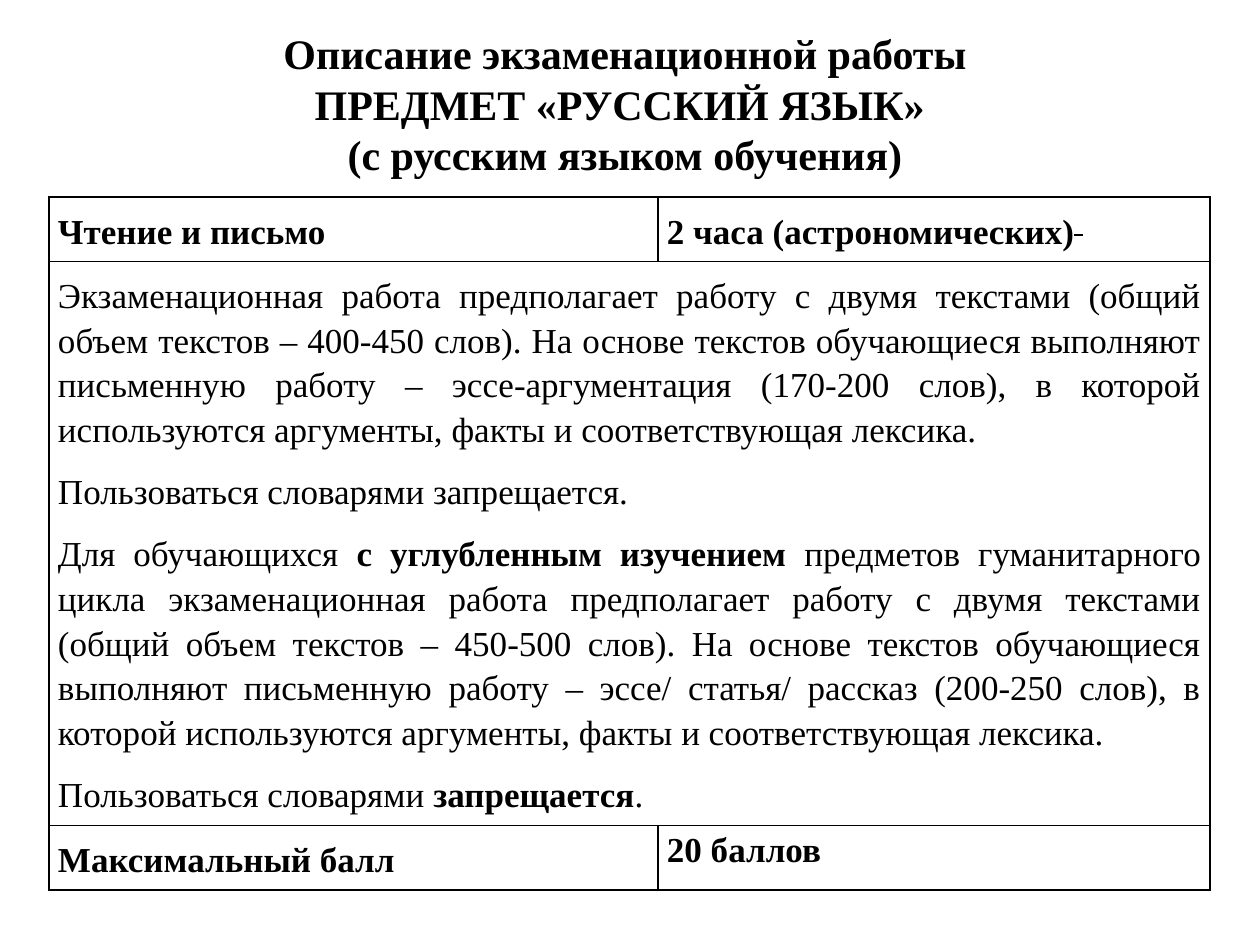
from lxml import etree
from pptx import Presentation
from pptx.dml.color import RGBColor
from pptx.enum.text import MSO_ANCHOR, PP_ALIGN
from pptx.oxml.ns import qn
from pptx.util import Pt

PX = 914400 / 126
FONT = "Times New Roman"
INK = "000000"
LEFT, CENTER, JUST = PP_ALIGN.LEFT, PP_ALIGN.CENTER, PP_ALIGN.JUSTIFY
MIDDLE = MSO_ANCHOR.MIDDLE

TITLE = [
    "Описание экзаменационной работы ",
    "ПРЕДМЕТ «РУССКИЙ ЯЗЫК» ",
    "(с русским языком обучения)",
]
BODY = [
    [("Экзаменационная работа предполагает работу с двумя текстами "
      "(общий объем текстов – 400-450 слов). На основе текстов обучающиеся "
      "выполняют письменную работу – эссе-аргументация (170-200 слов), "
      "в которой используются аргументы, факты и соответствующая лексика.", "")],
    [("Пользоваться словарями запрещается.", "")],
    [("Для обучающихся ", ""), ("с углубленным изучением", "b"),
     (" предметов гуманитарного цикла экзаменационная работа предполагает "
      "работу с двумя текстами (общий объем текстов – 450-500 слов). "
      "На основе текстов обучающиеся выполняют письменную работу – "
      "эссе/ статья/ рассказ (200-250 слов), в которой используются "
      "аргументы, факты и соответствующая лексика.", "")],
    [("Пользоваться словарями ", ""), ("запрещается", "b"), (".", "")],
]


def px(n):
    """Turn pixels into EMU."""
    return round(n * PX)


def color(code):
    """Turn a hex string into a colour."""
    return RGBColor.from_string(code)


def add_run(para, text, size, style=""):
    """Add a run; style may hold b for bold and s for strike."""
    run = para.add_run()
    run.text = text
    run.font.name = FONT
    run.font.size = Pt(size)
    run.font.bold = "b" in style
    run.font.color.rgb = color(INK)
    if "s" in style:
        run.font._element.set("strike", "sngStrike")


def fill_text(frame, paras, size, align):
    """Write paragraphs of (text, style) runs and return them."""
    for i, runs in enumerate(paras):
        para = frame.add_paragraph() if i else frame.paragraphs[0]
        para.alignment = align
        for text, style in runs:
            add_run(para, text, size, style)
    return frame.paragraphs


def add_title(slide):
    """Add the centred heading."""
    box = slide.shapes.add_textbox(px(266), px(5), px(718), px(231))
    frame = box.text_frame
    frame.word_wrap = True
    frame.vertical_anchor = MIDDLE
    frame.margin_top, frame.margin_bottom = px(21), px(55)
    fill_text(frame, [[(line, "b")] for line in TITLE], 24, CENTER)


def add_edges(cell):
    """Draw thin lines on all sides of a cell and clear its fill."""
    props = cell._tc.get_or_add_tcPr()
    for side in ("lnL", "lnR", "lnT", "lnB"):
        line = etree.SubElement(props, qn(f"a:{side}"), w=str(Pt(1)))
        fill = etree.SubElement(line, qn("a:solidFill"))
        etree.SubElement(fill, qn("a:srgbClr"), val=INK)
    cell.fill.background()


def fill_cell(cell, paras, align=LEFT, pad=10):
    """Set the margins and text of a cell."""
    cell.margin_left = cell.margin_right = px(9)
    cell.margin_top = cell.margin_bottom = px(pad)
    for para in fill_text(cell.text_frame, paras, 20, align):
        para.line_spacing = 1.15
        para.space_after = Pt(10)


def add_grid(slide):
    """Add the table that describes the exam."""
    cols, rows = (609, 552), (60, 489, 60)
    frame = slide.shapes.add_table(len(rows), len(cols), px(49), px(197),
                                   px(sum(cols)), px(sum(rows)))
    table = frame.table
    table.first_row = table.horz_banding = False
    for col, width in zip(table.columns, cols):
        col.width = px(width)
    for row, height in zip(table.rows, rows):
        row.height = px(height)
    for cell in table.iter_cells():
        add_edges(cell)
    table.cell(1, 0).merge(table.cell(1, 1))
    fill_cell(table.cell(0, 0), [[("Чтение и письмо", "b")]])
    fill_cell(table.cell(0, 1),
              [[("2 часа (астрономических)", "b"), (" ", "bs")]])
    fill_cell(table.cell(1, 0), BODY, JUST)
    fill_cell(table.cell(2, 0), [[("Максимальный балл", "b")]], JUST)
    fill_cell(table.cell(2, 1), [[("20 баллов ", "b")]], JUST, 0)


def main():
    """Build and save the slide."""
    deck = Presentation()
    deck.slide_width, deck.slide_height = px(1260), px(945)
    slide = deck.slides.add_slide(deck.slide_layouts[6])
    add_grid(slide)
    add_title(slide)
    deck.save("out.pptx")


if __name__ == "__main__":
    main()
